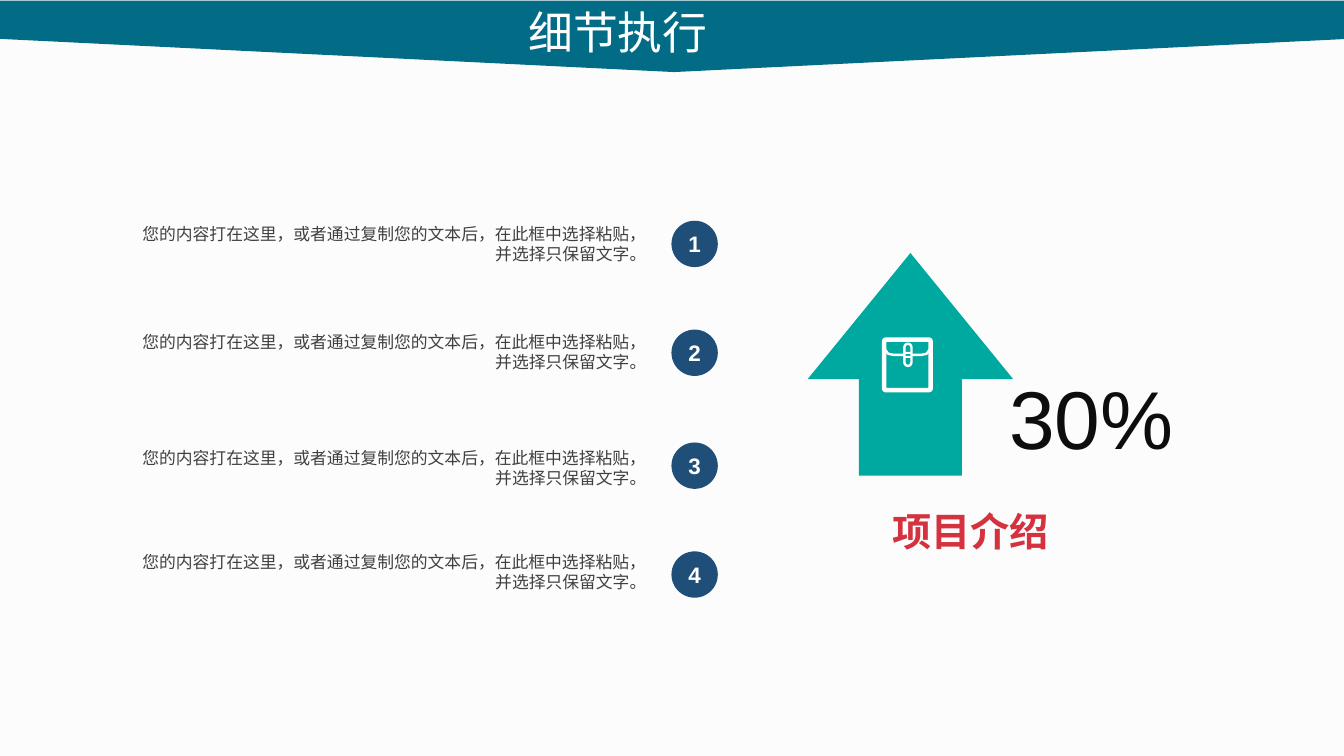
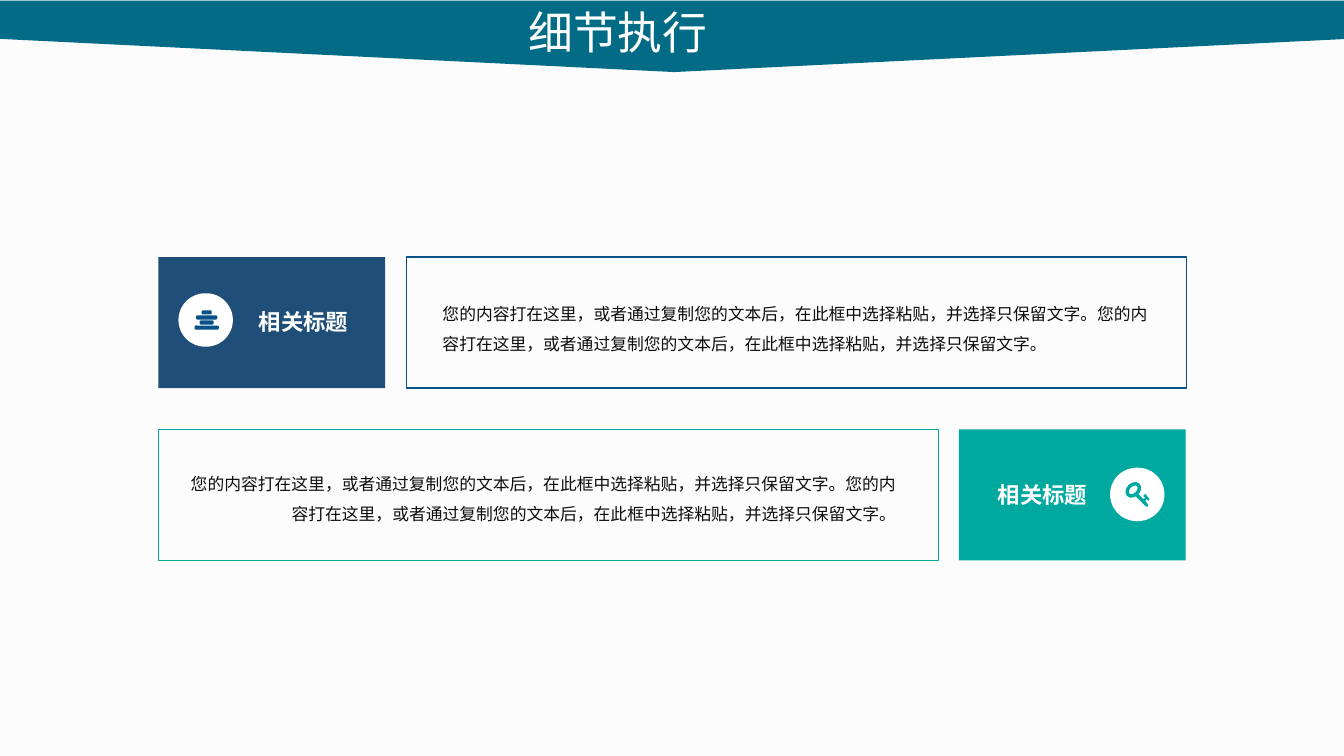
from lxml import etree
from pptx import Presentation
from pptx.dml.color import RGBColor
from pptx.enum.shapes import MSO_SHAPE
from pptx.enum.text import MSO_ANCHOR, MSO_AUTO_SIZE, PP_ALIGN
from pptx.oxml.ns import qn
from pptx.util import Inches, Pt

RECT, ROUND, OVAL = MSO_SHAPE.RECTANGLE, MSO_SHAPE.ROUNDED_RECTANGLE, MSO_SHAPE.OVAL
HOME_PLATE, UP_ARROW = MSO_SHAPE.PENTAGON, MSO_SHAPE.UP_ARROW
LEFT, CENTER, RIGHT = PP_ALIGN.LEFT, PP_ALIGN.CENTER, PP_ALIGN.RIGHT
TOP, MIDDLE = MSO_ANCHOR.TOP, MSO_ANCHOR.MIDDLE
NO_AUTOFIT = MSO_AUTO_SIZE.NONE

COLORS = {
    "page": "FCFCFC", "band": "026C86", "navy": "1F4E79", "blue": "075088",
    "teal": "00A99F", "red": "D4323E", "white": "FFFFFF", "ink": "0D0D0D", "gray": "404040",
}
CJK, LATIN, BODY = "Noto Sans CJK SC", "Arial", "Calibri"
SAMPLE = "您的内容打在这里，或者通过复制您的文本后，在此框中选择粘贴，并选择只保留文字。"


def rgb(name):
    return RGBColor.from_string(COLORS[name])


class Deck:
    def __init__(self):
        self.prs = Presentation()
        self.prs.slide_width, self.prs.slide_height = Inches(13.33), Inches(7.5)
        fill = self.prs.slide_master.background.fill
        fill.solid()
        fill.fore_color.rgb = rgb("page")
        self.s = None

    def slide(self, title):
        self.s = self.prs.slides.add_slide(self.prs.slide_layouts[5])
        band = self.shape(HOME_PLATE, 6.33, -6.33, 0.71, 13.38, "band", adj=0.464)
        band.rotation = 90
        sp = self.s.shapes.title
        sp.element.addprevious(band.element)
        sp.left, sp.top, sp.width, sp.height = map(Inches, (5.14, 0, 3.05, 0.64))
        self.set_text(sp, title, 32, "white", CJK)

    def set_text(self, sp, text, size, color, font, bold=False, align=LEFT, anchor=TOP,
                 wrap=True, spacing=None):
        tf = sp.text_frame
        tf.auto_size, tf.word_wrap, tf.vertical_anchor = NO_AUTOFIT, wrap, anchor
        tf.text = text
        p = tf.paragraphs[0]
        p.alignment = align
        if spacing:
            p.line_spacing, p.space_before = spacing, Pt(10)
        p.font.size, p.font.bold, p.font.name = Pt(size), bold, font
        p.font.color.rgb = rgb(color)
        etree.SubElement(p.font._element, qn("a:ea"), typeface=font)

    def text(self, x, y, w, h, text, size, color, font, **options):
        sp = self.s.shapes.add_textbox(Inches(x), Inches(y), Inches(w), Inches(h))
        self.set_text(sp, text, size, color, font, **options)

    def paint(self, sp, fill=None, line=None, width=1):
        sp.shadow.inherit = False
        if fill:
            sp.fill.solid()
            sp.fill.fore_color.rgb = rgb(fill)
        else:
            sp.fill.background()
        if line:
            sp.line.color.rgb, sp.line.width = rgb(line), Pt(width)
        else:
            sp.line.fill.background()

    def shape(self, kind, x, y, w, h, fill=None, line=None, width=1, adj=None):
        sp = self.s.shapes.add_shape(kind, Inches(x), Inches(y), Inches(w), Inches(h))
        self.paint(sp, fill, line, width)
        if adj is not None:
            sp.adjustments[len(sp.adjustments) - 1] = adj
        return sp

    def outline(self, points, fill=None, line=None, width=1, close=True):
        start, *rest = [(Inches(x), Inches(y)) for x, y in points]
        builder = self.s.shapes.build_freeform(*start)
        builder.add_line_segments(rest, close=close)
        self.paint(builder.convert_to_shape(), fill, line, width)

    def step(self, number, circle_y, text_y):
        self.text(1.29, text_y, 5.22, 0.5, SAMPLE, 12, "gray", BODY, align=RIGHT)
        sp = self.shape(OVAL, 6.66, circle_y, 0.46, 0.46, "navy")
        self.set_text(sp, str(number), 16, "white", LATIN, bold=True, align=CENTER, anchor=MIDDLE)

    def pouch_icon(self, x, y):
        self.shape(ROUND, x + 0.02, y + 0.02, 0.46, 0.5, line="white", width=3.2, adj=0.03)
        flap = [(0.03, 0.12), (0.06, 0.16), (0.11, 0.17), (0.39, 0.17), (0.44, 0.16), (0.47, 0.12)]
        self.outline([(x + dx, y + dy) for dx, dy in flap], line="white", width=1.7, close=False)
        self.shape(ROUND, x + 0.22, y + 0.06, 0.07, 0.22, "teal", "white", 1.7, adj=0.5)
        for dy in (0.14, 0.18):
            self.shape(RECT, x + 0.22, y + dy, 0.07, 0.02, "white")

    def stack_icon(self, center, y):
        for i, w in enumerate((0.1, 0.21, 0.14, 0.24)):
            self.shape(ROUND, center - w / 2, y + 0.05 * i, w, 0.04, "blue", adj=0.3)

    def key_icon(self, x, y):
        bow = self.shape(OVAL, x + 0.02, y + 0.03, 0.14, 0.1, line="teal", width=2.4)
        bow.rotation = -45
        shaft = [(0.11, 0.14), (0.21, 0.24), (0.23, 0.25), (0.24, 0.23), (0.21, 0.19),
                 (0.22, 0.17), (0.24, 0.19), (0.25, 0.17), (0.21, 0.12), (0.19, 0.14),
                 (0.21, 0.16), (0.19, 0.17), (0.14, 0.12)]
        self.outline([(x + dx, y + dy) for dx, dy in shaft], "teal")

    def panel(self, y, frame_x, block_x, line, fill, label_at, badge_at, text_at, align):
        self.shape(RECT, frame_x, y, 7.74, 1.3, line=line)
        self.shape(RECT, block_x, y, 2.25, 1.3, fill)
        self.shape(ROUND, *badge_at, 0.54, 0.53, "white", adj=0.5)
        self.text(*label_at, 1.1, 0.37, "相关标题", 16, "white", CJK, bold=True, wrap=False)
        self.text(*text_at, 7.22, 0.71, SAMPLE * 2, 12, "ink", CJK, align=align, spacing=1.5)


def main():
    deck = Deck()

    deck.slide("细节执行")
    rows = [(2.19, 2.17), (3.27, 3.24), (4.39, 4.39), (5.47, 5.42)]
    for number, (circle_y, text_y) in enumerate(rows, 1):
        deck.step(number, circle_y, text_y)
    deck.shape(UP_ARROW, 8.01, 2.51, 2.04, 2.21, "teal", adj=0.614)
    deck.text(9.91, 3.6, 2.37, 1.09, "30%", 58.6, "ink", LATIN)
    deck.pouch_icon(8.75, 3.35)
    deck.text(8.75, 4.98, 2.57, 0.57, "项目介绍", 28, "red", CJK, bold=True)

    deck.slide("细节执行")
    deck.panel(2.55, 4.03, 1.57, "blue", "navy", (2.47, 3.01), (1.77, 2.91), (4.29, 2.86), LEFT)
    deck.stack_icon(2.05, 3.08)
    deck.panel(4.26, 1.57, 9.51, "teal", "teal", (9.8, 4.72), (11.01, 4.64), (1.77, 4.55), RIGHT)
    deck.key_icon(11.15, 4.78)

    deck.prs.save("out.pptx")


if __name__ == "__main__":
    main()
